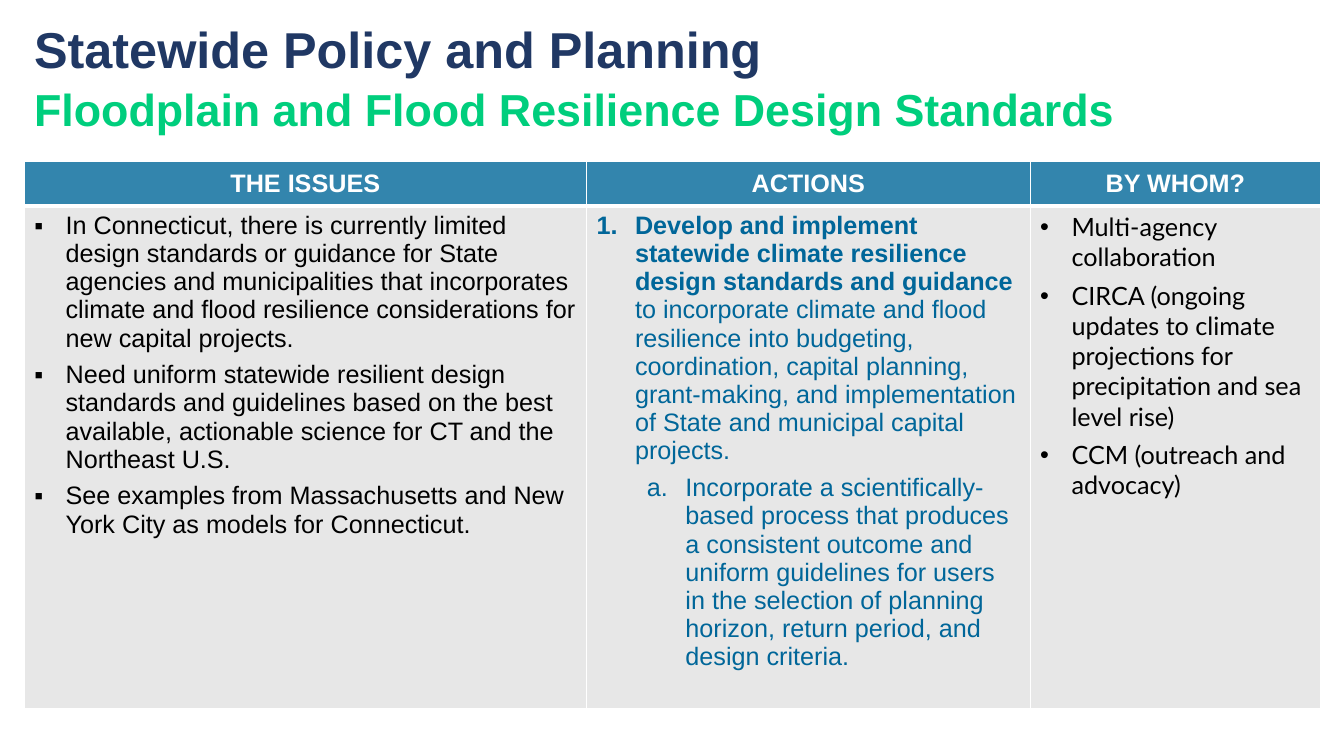
import lxml.etree
import pptx
import pptx.dml.color
import pptx.enum.text
import pptx.oxml.ns
import pptx.util

Cm = pptx.util.Cm
Pt = pptx.util.Pt

HEADINGS = ["THE ISSUES", "ACTIONS", "BY WHOM?"]
COLUMN_WIDTHS = [14.17, 11.18, 7.32]
ROW_HEIGHTS = [1.14, 12.24]
ISSUES = [
    "In Connecticut, there is currently limited design standards or guidance for State agencies and "
    "municipalities that incorporates climate and flood resilience considerations for new capital projects.",
    "Need uniform statewide resilient design standards and guidelines based on the best available, "
    "actionable science for CT and the Northeast U.S.",
    "See examples from Massachusetts and New York City as models for Connecticut.",
]
ACTION_LEAD = "Develop and implement statewide climate resilience design standards and guidance "
ACTION_REST = (
    "to incorporate climate and flood resilience into budgeting, coordination, capital planning, "
    "grant-making, and implementation of State and municipal capital projects."
)
SUB_ACTION = (
    "Incorporate a scientifically-based process that produces a consistent outcome and uniform "
    "guidelines for users in the selection of planning horizon, return period, and design criteria."
)
PARTIES = [
    "Multi-agency collaboration",
    "CIRCA (ongoing updates to climate projections for precipitation and sea level rise)",
    "CCM (outreach and advocacy)",
]


def rgb(value):
    """Turn a hex string into a colour."""
    return pptx.dml.color.RGBColor.from_string(value)


def add_xml(parent, tag, **attributes):
    """Append a drawing element and return it."""
    return lxml.etree.SubElement(parent, pptx.oxml.ns.qn(tag), attributes)


def style_span(span, size, color, bold=False, font="Arial"):
    """Format one run."""
    span.font.name = font
    span.font.size = Pt(size)
    span.font.bold = bold
    span.font.color.rgb = rgb(color)


def add_title(page, lines):
    """Add the title, one styled run per line."""
    box = page.shapes.add_textbox(Cm(0.61), Cm(1.14), Cm(32.66), Cm(1.5))
    frame = box.text_frame
    frame.word_wrap = True
    frame.vertical_anchor = pptx.enum.text.MSO_ANCHOR.MIDDLE
    para = frame.paragraphs[0]
    para.text = "\v".join(text for text, size, color in lines)
    para.line_spacing = 1.06
    for span, (text, size, color) in zip(para.runs, lines):
        style_span(span, size, color, bold=True)


def style_cell(cell, fill, bottom_width):
    """Give a cell white borders and a fill."""
    properties = cell._tc.get_or_add_tcPr()
    for side in "LRTB":
        width = bottom_width if side == "B" else 1
        line = add_xml(properties, f"a:ln{side}", w=str(Pt(width)))
        add_xml(add_xml(line, "a:solidFill"), "a:srgbClr", val="FFFFFF")
    cell.fill.solid()
    cell.fill.fore_color.rgb = rgb(fill)


def add_table(page):
    """Add the table with its headings and return it."""
    frame = page.shapes.add_table(2, 3, Cm(0.61), Cm(4.06), Cm(sum(COLUMN_WIDTHS)), Cm(sum(ROW_HEIGHTS)))
    table = frame.table
    table.horz_banding = False
    for column, width in zip(table.columns, COLUMN_WIDTHS):
        column.width = Cm(width)
    for row, height in zip(table.rows, ROW_HEIGHTS):
        row.height = Cm(height)
    for index, heading in enumerate(HEADINGS):
        cell = table.cell(0, index)
        style_cell(cell, "3385AD", 3)
        style_cell(table.cell(1, index), "E7E7E7", 1)
        cell.vertical_anchor = pptx.enum.text.MSO_ANCHOR.MIDDLE
        para = cell.text_frame.paragraphs[0]
        para.text = heading
        para.alignment = pptx.enum.text.PP_ALIGN.CENTER
        style_span(para.runs[0], 18, "FFFFFF", bold=True)
    return table


def set_list(para, left, hanging, bullet=None, numbering=None):
    """Make a paragraph a bulleted or numbered list item."""
    properties = para._p.get_or_add_pPr()
    properties.set("marL", str(Cm(left)))
    properties.set("indent", str(-Cm(hanging)))
    add_xml(properties, "a:buFont", typeface="Arial")
    if bullet:
        add_xml(properties, "a:buChar", char=bullet)
    else:
        add_xml(properties, "a:buAutoNum", type=numbering)
    para.space_after = Pt(6)


def fill_bullets(cell, items, bullet, font):
    """Write a bulleted list into a cell."""
    frame = cell.text_frame
    frame.text = "\n".join(items)
    for para in frame.paragraphs:
        set_list(para, 0.79, 0.79, bullet=bullet)
        style_span(para.runs[0], 18, "000000", font=font)


def fill_actions(cell):
    """Write the numbered action and its sub-item into a cell."""
    frame = cell.text_frame
    frame.text = f"{ACTION_LEAD}\n{SUB_ACTION}"
    action, sub_action = frame.paragraphs
    action.add_run().text = ACTION_REST
    sub_action.level = 1
    set_list(action, 0.97, 0.97, numbering="arabicPeriod")
    set_list(sub_action, 2.24, 0.97, numbering="alphaLcPeriod")
    for span in action.runs + sub_action.runs:
        style_span(span, 18, "006699", bold=span.text == ACTION_LEAD)


def main():
    """Build the slide and save it."""
    deck = pptx.Presentation()
    deck.slide_width, deck.slide_height = Cm(33.87), Cm(19.05)
    page = deck.slides.add_slide(deck.slide_layouts[6])
    add_title(page, [
        ("Statewide Policy and Planning", 36, "203864"),
        ("Floodplain and Flood Resilience Design Standards", 32, "00CE7D"),
    ])
    table = add_table(page)
    fill_bullets(table.cell(1, 0), ISSUES, "▪", "Arial")
    fill_actions(table.cell(1, 1))
    fill_bullets(table.cell(1, 2), PARTIES, "•", "Lato")
    deck.save("out.pptx")


if __name__ == "__main__":
    main()
